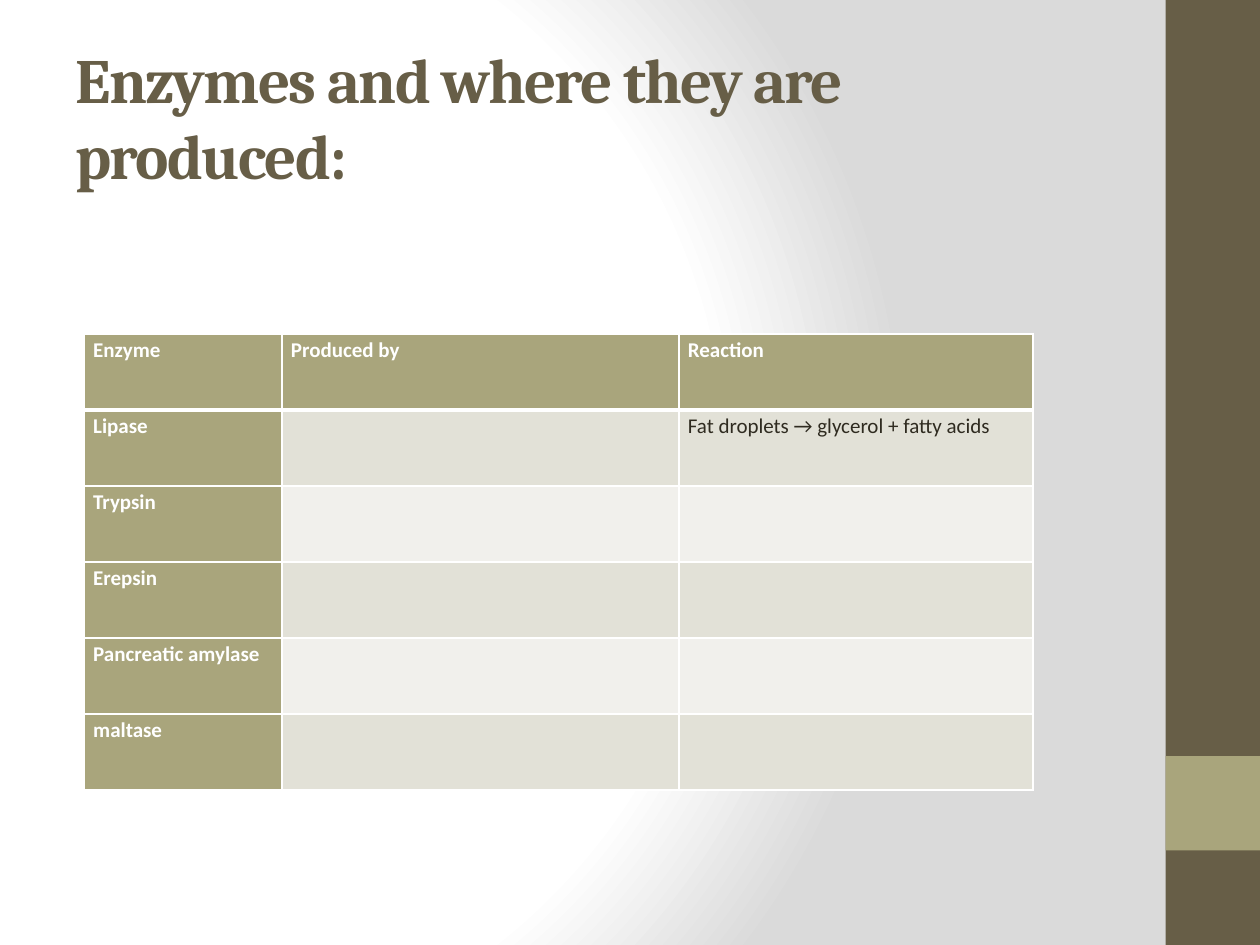
import pptx
import pptx.dml.color
import pptx.enum.shapes
import pptx.enum.text
import pptx.oxml
import pptx.oxml.ns
import pptx.util

Inches = pptx.util.Inches
RGBColor = pptx.dml.color.RGBColor

BROWN = RGBColor(0x67, 0x5E, 0x47)
KHAKI = RGBColor(0xA9, 0xA5, 0x7C)
DARK_BAND = RGBColor(0xE2, 0xE1, 0xD7)
LIGHT_BAND = RGBColor(0xF1, 0xF0, 0xEC)
INK = RGBColor(0x2F, 0x2B, 0x20)
WHITE = RGBColor(0xFF, 0xFF, 0xFF)
GREY = RGBColor(0xDA, 0xDA, 0xDA)

TITLE = "Enzymes and where they are produced:"
ROWS = [
    ("Enzyme", "Produced by", "Reaction"),
    ("Lipase", "", "Fat droplets → glycerol + fatty acids"),
    ("Trypsin", "", ""),
    ("Erepsin", "", ""),
    ("Pancreatic amylase", "", ""),
    ("maltase", "", ""),
]
COLUMN_WIDTHS = (1.57, 3.15, 2.81)
TABLE_LEFT, TABLE_TOP, TABLE_HEIGHT = 0.67, 2.65, 3.62
WIDTH, HEIGHT, BAR = 10, 7.5, 0.75
SIDEBARS = [(0, HEIGHT, BROWN), (HEIGHT - 2 * BAR, BAR, KHAKI)]
BACKGROUND_STOPS = [(0, WHITE), (75, WHITE), (100, GREY)]

TITLE_FONT = {"name": "Cambria", "size": pptx.util.Pt(36), "bold": True}
CELL_FONT = {"name": "Calibri", "size": pptx.util.Pt(12)}
CELL_FORMAT = {
    "margin_left": Inches(0.07),
    "margin_right": Inches(0.07),
    "margin_top": 0,
    "margin_bottom": 0,
}
NAMESPACE = pptx.oxml.ns.nsdecls("a")


def apply_format(target, values):
    for name, value in values.items():
        setattr(target, name, value)


def paint_background(slide):
    slide.background.fill.gradient()
    gradient = slide.element.find(".//" + pptx.oxml.ns.qn("a:gradFill"))
    stops = "".join(
        f'<a:gs pos="{position * 1000}"><a:srgbClr val="{color}"/></a:gs>'
        for position, color in BACKGROUND_STOPS
    )
    radial = pptx.oxml.parse_xml(
        f'<a:gradFill {NAMESPACE} rotWithShape="1"><a:gsLst>{stops}</a:gsLst>'
        '<a:path path="circle"><a:fillToRect l="20000" t="50000" r="100000" b="50000"/>'
        "</a:path></a:gradFill>"
    )
    gradient.getparent().replace(gradient, radial)


def add_sidebars(slide):
    for top, height, color in SIDEBARS:
        shape = slide.shapes.add_shape(
            pptx.enum.shapes.MSO_SHAPE.RECTANGLE,
            Inches(WIDTH - BAR), Inches(top), Inches(BAR), Inches(height),
        )
        shape.shadow.inherit = False
        shape.fill.solid()
        shape.fill.fore_color.rgb = color
        shape.line.fill.background()


def write_title(slide):
    title = slide.shapes.title
    apply_format(title, {
        "left": Inches(0.5), "top": Inches(0.3),
        "width": Inches(8.33), "height": Inches(1.25),
    })
    frame = title.text_frame
    apply_format(frame, {
        "text": TITLE,
        "word_wrap": True,
        "auto_size": pptx.enum.text.MSO_AUTO_SIZE.NONE,
        "vertical_anchor": pptx.enum.text.MSO_ANCHOR.MIDDLE,
    })
    paragraph = frame.paragraphs[0]
    paragraph.alignment = pptx.enum.text.PP_ALIGN.LEFT
    font = paragraph.runs[0].font
    apply_format(font, TITLE_FONT)
    font.color.rgb = BROWN
    paragraph.runs[0]._r.get_or_add_rPr().set("spc", "-100")


def set_borders(cell, widths):
    properties = cell._tc.get_or_add_tcPr()
    for index, (side, width) in enumerate(widths.items()):
        properties.insert(index, pptx.oxml.parse_xml(
            f'<a:ln{side} {NAMESPACE} w="{pptx.util.Pt(width)}"><a:solidFill>'
            f'<a:srgbClr val="{WHITE}"/></a:solidFill></a:ln{side}>'
        ))


def format_cell(cell, text, row, column):
    heading = row == 0 or column == 0
    apply_format(cell, CELL_FORMAT)
    cell.text = text
    cell.fill.solid()
    cell.fill.fore_color.rgb = KHAKI if heading else (LIGHT_BAND, DARK_BAND)[row % 2]
    set_borders(cell, {"L": 1, "R": 1, "T": 3 if row == 1 else 1, "B": 3 if row == 0 else 1})
    paragraph = cell.text_frame.paragraphs[0]
    paragraph.line_spacing = 1.15
    apply_format(paragraph.font, CELL_FONT)
    for run in paragraph.runs:
        apply_format(run.font, {**CELL_FONT, "bold": heading})
        run.font.color.rgb = WHITE if heading else INK


def add_enzyme_table(slide):
    table = slide.shapes.add_table(
        len(ROWS), len(COLUMN_WIDTHS), Inches(TABLE_LEFT), Inches(TABLE_TOP),
        Inches(sum(COLUMN_WIDTHS)), Inches(TABLE_HEIGHT),
    ).table
    table.first_col = True
    for column, width in zip(table.columns, COLUMN_WIDTHS):
        column.width = Inches(width)
    for row, texts in enumerate(ROWS):
        for column, text in enumerate(texts):
            format_cell(table.cell(row, column), text, row, column)


def main():
    presentation = pptx.Presentation()
    presentation.slide_width = Inches(WIDTH)
    presentation.slide_height = Inches(HEIGHT)
    slide = presentation.slides.add_slide(presentation.slide_layouts[5])
    paint_background(slide)
    add_sidebars(slide)
    write_title(slide)
    add_enzyme_table(slide)
    presentation.save("out.pptx")


if __name__ == "__main__":
    main()
